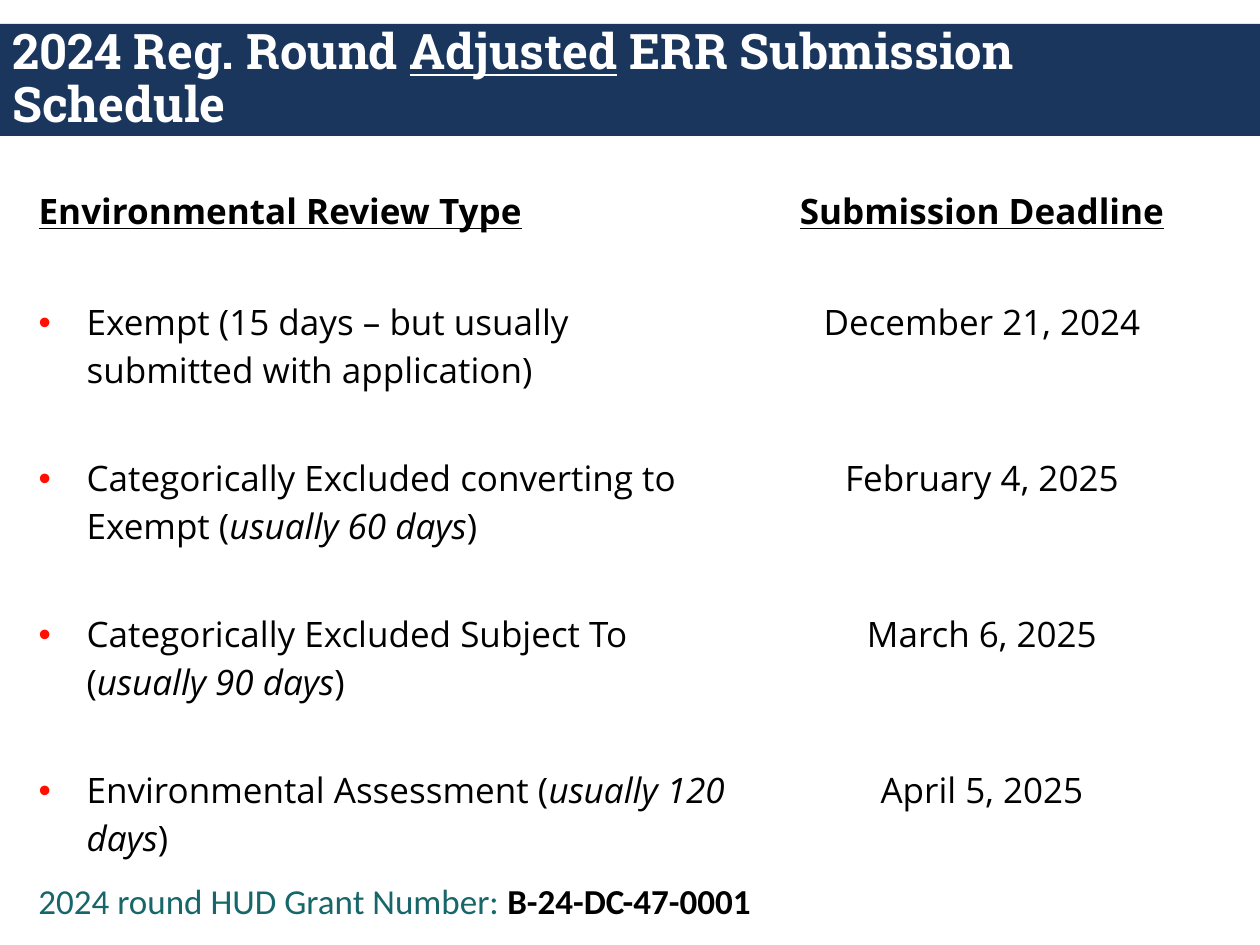
from lxml import etree
from pptx import Presentation, util as u
from pptx.dml.color import RGBColor
from pptx.enum import shapes, text
from pptx.oxml.ns import qn

HUES = {"navy": "1B365D", "white": "FFFFFF", "black": "000000",
        "red": "FF0F00", "teal": "16666A"}

# A run is (text, marks): b bold, i italic, u underlined.
TITLE = [("2024 Reg. Round ", "b"), ("Adjusted", "bu"),
         (" ERR Submission Schedule", "b")]
HEADS = ["Environmental Review Type", "Submission Deadline"]
ROWS = [
    ([("Exempt (15 days – but usually submitted with application)", "")],
     "December 21, 2024"),
    ([("Categorically Excluded converting to Exempt (", ""),
      ("usually 60 days", "i"), (")", "")], "February 4, 2025"),
    ([("Categorically Excluded Subject To (", ""),
      ("usually 90 days", "i"), (")", "")], "March 6, 2025"),
    ([("Environmental Assessment (", ""),
      ("usually 120 days", "i"), (")", "")], "April 5, 2025"),
]
GRANT = [("2024 round HUD Grant Number: ", "", "teal"),
         ("B-24-DC-47-0001", "b", "black")]

COLS = [721, 470]
HIGH = [111, 156, 156, 156, 108]
INDENT = 48


def px(n):
    return u.Emu(round(n * 914400 / 126))


def box(*at):
    return [px(n) for n in at]


def rgb(hue):
    return RGBColor.from_string(HUES[hue])


def write(para, run, face, size, hue):
    item = para.add_run()
    item.text, marks = run
    font = item.font
    font.name, font.size = face, u.Pt(size)
    font.color.rgb = rgb(hue)
    font.bold, font.italic = "b" in marks, "i" in marks
    font.underline = "u" in marks


def bullet(para):
    """Give the paragraph a hanging red dot and a tab stop."""
    props = para._p.get_or_add_pPr()
    props.set("marL", str(px(INDENT)))
    props.set("indent", str(-px(INDENT)))
    tint = etree.SubElement(props, qn("a:buClr"))
    etree.SubElement(tint, qn("a:srgbClr"), val=HUES["red"])
    etree.SubElement(props, qn("a:buFont"), typeface="Arial")
    etree.SubElement(props, qn("a:buChar"), char="•")
    tabs = etree.SubElement(props, qn("a:tabLst"))
    etree.SubElement(tabs, qn("a:tab"), pos=str(px(567)), algn="l")


def label(slide, *at):
    frame = slide.shapes.add_textbox(*box(*at)).text_frame
    frame.word_wrap = True
    return frame


def banner(slide):
    bar = slide.shapes.add_shape(shapes.MSO_SHAPE.RECTANGLE,
                                 *box(0, 24, 1260, 112))
    bar.shadow.inherit = False
    bar.fill.solid()
    bar.fill.fore_color.rgb = rgb("navy")
    bar.line.fill.background()
    frame = label(slide, 0, 24, 1250, 113)
    frame.vertical_anchor = text.MSO_ANCHOR.MIDDLE
    para = frame.paragraphs[0]
    para.line_spacing = 0.9
    for run in TITLE:
        write(para, run, "Roboto Slab", 28, "white")


def dates(slide):
    """Lay out the table of review types and deadlines."""
    lines = [[[(head, "bu")] for head in HEADS]]
    lines += [[kind, [(day, "")]] for kind, day in ROWS]
    grid = slide.shapes.add_table(len(lines), len(COLS), *box(
        26, 181, sum(COLS), sum(HIGH))).table
    grid.first_row = grid.horz_banding = False
    for col, wide in zip(grid.columns, COLS):
        col.width = px(wide)
    for row, high in zip(grid.rows, HIGH):
        row.height = px(high)
    for r, line in enumerate(lines):
        for c, runs in enumerate(line):
            cell = grid.cell(r, c)
            cell.fill.background()
            para = cell.text_frame.paragraphs[0]
            if c:
                para.alignment = text.PP_ALIGN.CENTER
            elif r:
                bullet(para)
            for run in runs:
                write(para, run, "Open Sans", 20, "black")


def footer(slide):
    frame = label(slide, 26, 873, 1050, 55)
    frame.auto_size = text.MSO_AUTO_SIZE.SHAPE_TO_FIT_TEXT
    for words, marks, hue in GRANT:
        write(frame.paragraphs[0], (words, marks), "Calibri", 20, hue)


def main():
    deck = Presentation()
    deck.slide_width, deck.slide_height = box(1260, 945)
    slide = deck.slides.add_slide(deck.slide_layouts[6])
    banner(slide)
    dates(slide)
    footer(slide)
    deck.save("out.pptx")


if __name__ == "__main__":
    main()
